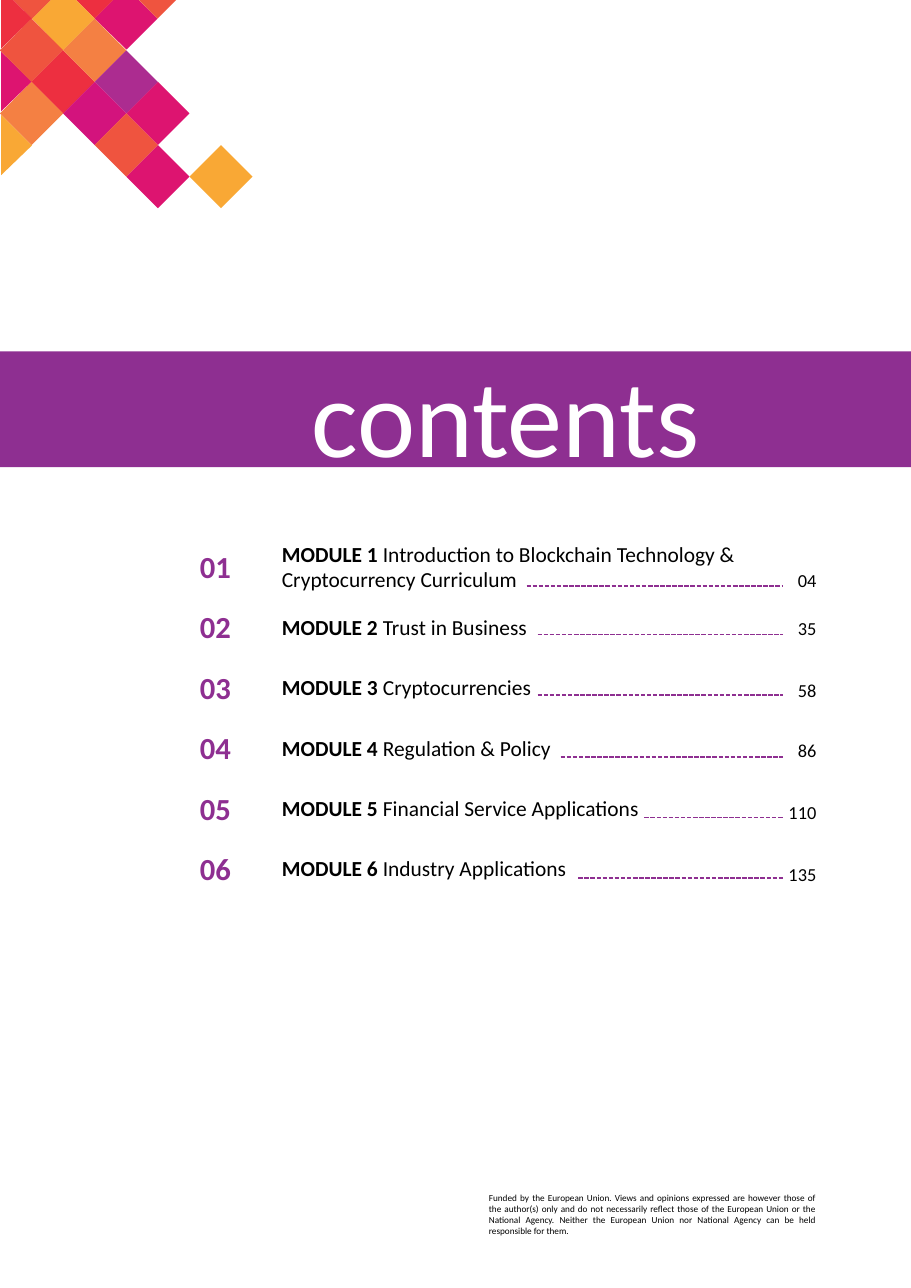
from lxml.etree import SubElement
from pptx import Presentation
from pptx.dml.color import RGBColor
from pptx.enum.dml import MSO_LINE
from pptx.enum.shapes import MSO_CONNECTOR, MSO_SHAPE
from pptx.enum.text import MSO_ANCHOR, PP_ALIGN
from pptx.oxml.ns import qn
from pptx.util import Pt

PX = 9144
PAGE_W, PAGE_H = 827, 1169
FONT = "Calibri"
COLORS = {
    "purple": "8E2F91",
    "black": "000000",
    "white": "FFFFFF",
    "red": "ED2F40",
    "pink": "DD1470",
    "coral": "EF543F",
    "amber": "F9A835",
    "orange": "F48043",
    "violet": "AC2C90",
    "magenta": "D3137D",
}

TITLE = "contents"
DISCLAIMER = (
    "Funded by the European Union. Views and opinions expressed are however "
    "those of the author(s) only and do not necessarily reflect those of the "
    "European Union or the National Agency. Neither the European Union nor "
    "National Agency can be held responsible for them."
)

# module title, page, page top, leader start, leader y
MODULES = [
    ("Introduction to Blockchain Technology & Cryptocurrency Curriculum", "04", 508, 478, 532),
    ("Trust in Business", "35", 551, 488, 576),
    ("Cryptocurrencies", "58", 607, 488, 631),
    ("Regulation & Policy", "86", 662, 509, 687),
    ("Financial Service Applications", "110", 718, 585, 742),
    ("Industry Applications", "135", 774, 525, 797),
]

MOSAIC_STEP = 86 / 3
MOSAIC_TOP = 17
WHOLE_TILES = [
    (1, 1, "coral"),
    (2, 2, "red"),
    (3, 1, "orange"),
    (1, 3, "orange"),
    (7, 5, "amber"),
    (5, 5, "pink"),
    (5, 3, "pink"),
    (4, 2, "violet"),
    (3, 3, "magenta"),
    (4, 4, "coral"),
]
CUT_TILES = [
    ("red", [(86, 17), (103, 0), (69, 0)]),
    ("pink", [(115, 45), (143, 17), (126, 0), (103, 0), (86, 17)]),
    ("coral", [(143, 17), (160, 0), (126, 0)]),
    ("amber", [(57, 46), (86, 17), (69, 0), (46, 0), (29, 17)]),
    ("coral", [(29, 17), (46, 0), (12, 0)]),
    ("red", [(1, 44), (29, 17), (12, 0), (1, 0)]),
    ("pink", [(1, 101), (29, 74), (1, 47)]),
    ("amber", [(1, 159), (29, 132), (1, 104)]),
]

ROW_TOP, ROW_PITCH, ROW_H = 495, 54.8, 38
LEADER_END = 711


def px(length):
    return round(length * PX)


def rgb(color):
    return RGBColor.from_string(COLORS[color])


def paint(shape, color):
    shape.shadow.inherit = False
    shape.fill.solid()
    shape.fill.fore_color.rgb = rgb(color)
    shape.line.fill.background()


def add_preset(kind, left, top, width, height, color):
    paint(slide.shapes.add_shape(kind, px(left), px(top), px(width), px(height)), color)


def add_text(text, left, top, width, height, size, color="black", bold=False,
             lead="", align=PP_ALIGN.LEFT, anchor=MSO_ANCHOR.MIDDLE):
    frame = slide.shapes.add_textbox(px(left), px(top), px(width), px(height)).text_frame
    frame.word_wrap = True
    frame.vertical_anchor = anchor
    paragraph = frame.paragraphs[0]
    paragraph.alignment = align
    for words, weight in ((lead, True), (text, bold)):
        if words:
            run = paragraph.add_run()
            run.text = words
            run.font.name = FONT
            run.font.size = Pt(size)
            run.font.bold = weight
            run.font.color.rgb = rgb(color)


def add_leader(start, end, y):
    leader = slide.shapes.add_connector(MSO_CONNECTOR.STRAIGHT, px(start), px(y), px(end), px(y))
    leader.line.color.rgb = rgb("purple")
    leader.line.width = Pt(1)
    leader.line.dash_style = MSO_LINE.SQUARE_DOT
    SubElement(leader._element.spPr, qn("a:effectLst"))


deck = Presentation()
deck.slide_width, deck.slide_height = px(PAGE_W), px(PAGE_H)
slide = deck.slides.add_slide(deck.slide_layouts[6])

add_preset(MSO_SHAPE.RECTANGLE, 0, 319, PAGE_W, 105, "purple")
add_text(DISCLAIMER, 434, 1077, 316, 50, 6, align=PP_ALIGN.JUSTIFY, anchor=MSO_ANCHOR.TOP)

for color, corners in CUT_TILES:
    outline = slide.shapes.build_freeform(*corners[0], scale=PX)
    outline.add_line_segments(corners[1:], close=True)
    paint(outline.convert_to_shape(), color)

for column, row, color in WHOLE_TILES:
    add_preset(MSO_SHAPE.DIAMOND, (column - 1) * MOSAIC_STEP,
               MOSAIC_TOP + (row - 1) * MOSAIC_STEP,
               2 * MOSAIC_STEP, 2 * MOSAIC_STEP, color)

add_text(TITLE, 273, 310, 510, 154, 72, color="white", anchor=MSO_ANCHOR.TOP)

for index, (module, page, page_top, leader_start, leader_y) in enumerate(MODULES):
    number = index + 1
    top = ROW_TOP + index * ROW_PITCH
    add_text(f"{number:02}", 160, top, 71, ROW_H, 20, color="purple", bold=True,
             align=PP_ALIGN.CENTER)
    add_text(module, 246, top, 435, ROW_H, 14, lead=f"MODULE {number} ")
    add_text(page, 701, page_top, 50, ROW_H, 12, align=PP_ALIGN.RIGHT)
    add_leader(leader_start, LEADER_END, leader_y)

deck.save("out.pptx")
